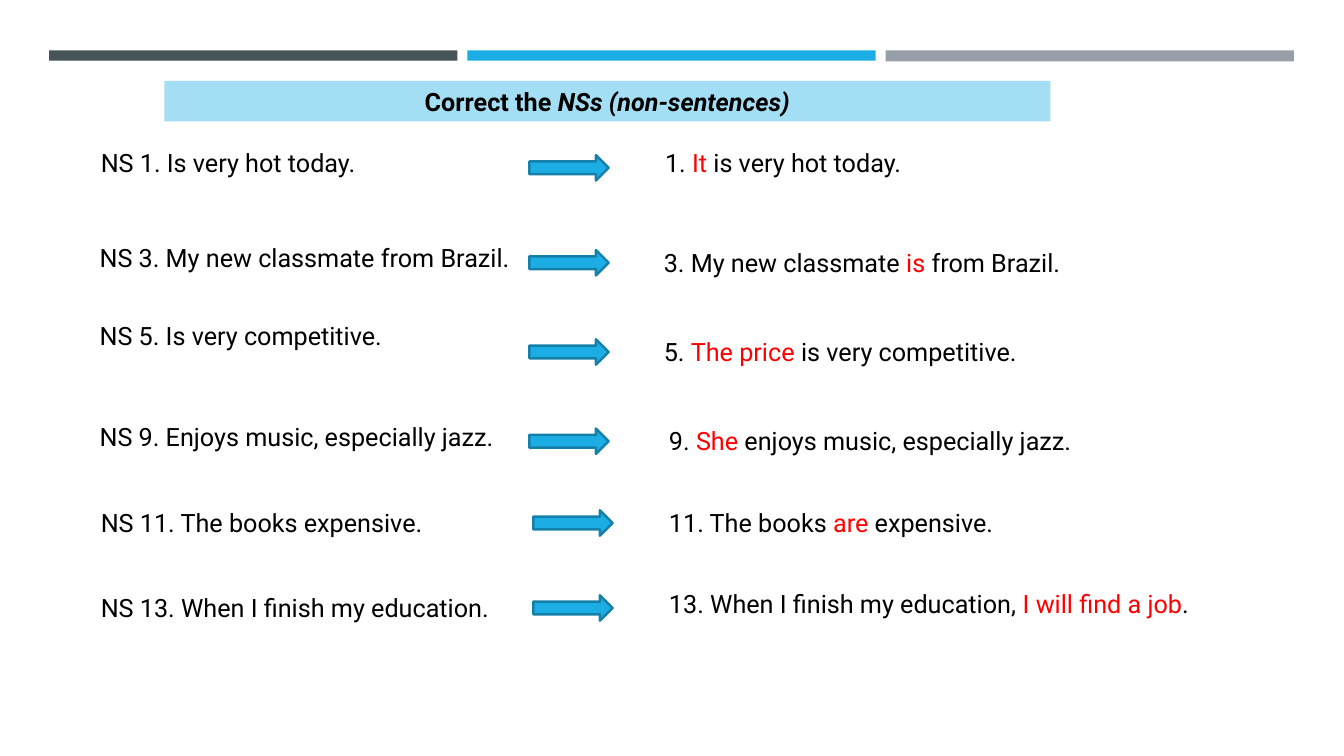
"""Build the slide that corrects non-sentences into full sentences."""
from pptx import Presentation
from pptx.dml.color import RGBColor
from pptx.enum.shapes import MSO_SHAPE
from pptx.enum.text import MSO_ANCHOR, MSO_AUTO_SIZE, PP_ALIGN
from pptx.util import Cm, Pt

RECTANGLE = MSO_SHAPE.RECTANGLE
RIGHT_ARROW = MSO_SHAPE.RIGHT_ARROW
MIDDLE = MSO_ANCHOR.MIDDLE
FIT_SHAPE = MSO_AUTO_SIZE.SHAPE_TO_FIT_TEXT
NO_FIT = MSO_AUTO_SIZE.NONE
CENTER = PP_ALIGN.CENTER

BLACK = RGBColor(0x00, 0x00, 0x00)
RED = RGBColor(0xFF, 0x00, 0x00)
SLATE = RGBColor(0x46, 0x53, 0x59)
BLUE = RGBColor(0x1C, 0xAD, 0xE4)
GRAY = RGBColor(0x96, 0x9F, 0xA7)
DARK_BLUE = RGBColor(0x15, 0x80, 0xA9)
PALE_BLUE = RGBColor(0xA4, 0xDE, 0xF4)

LINE_HEIGHT = 1.02


def add_run(paragraph, text, color=BLACK):
    run = paragraph.add_run()
    run.text = text
    run.font.name = "Roboto"
    run.font.size = Pt(18)
    run.font.color.rgb = color
    return run


def add_sentence(left, top, width, parts):
    box = slide.shapes.add_textbox(Cm(left), Cm(top), Cm(width), Cm(LINE_HEIGHT))
    box.text_frame.word_wrap = True
    box.text_frame.auto_size = FIT_SHAPE
    for text, color in parts:
        add_run(box.text_frame.paragraphs[0], text, color)


presentation = Presentation()
presentation.slide_width = Cm(33.87)
presentation.slide_height = Cm(19.05)
slide = presentation.slides.add_slide(presentation.slide_layouts[5])

for column, (color, height) in enumerate([(SLATE, 0.26), (BLUE, 0.26), (GRAY, 0.28)]):
    bar = slide.shapes.add_shape(
        RECTANGLE, Cm(1.24 + 10.54 * column), Cm(1.27), Cm(10.29), Cm(height))
    bar.shadow.inherit = False
    bar.fill.solid()
    bar.fill.fore_color.rgb = color
    bar.line.fill.background()

heading = slide.shapes.title
heading.left, heading.top = Cm(4.14), Cm(2.04)
heading.width, heading.height = Cm(22.33), Cm(LINE_HEIGHT)
heading.fill.solid()
heading.fill.fore_color.rgb = PALE_BLUE
heading.text_frame.auto_size = NO_FIT
heading.text_frame.vertical_anchor = MIDDLE
heading_line = heading.text_frame.paragraphs[0]
heading_line.alignment = CENTER
for text, italic in [("Correct the ", False), ("NSs (non-sentences)", True)]:
    run = add_run(heading_line, text)
    run.font.bold = True
    run.font.italic = italic

corrections = [
    ("NS 1. Is very hot today.", 2.29, 3.58, 13.34, 3.91, 16.51, 3.58,
     ("1.", " It ", "is very hot today.")),
    ("NS 3. My new classmate from Brazil.", 2.26, 5.99, 13.34, 6.3, 16.48, 6.1,
     ("3. My new classmate ", "is", " from Brazil.")),
    ("NS 5. Is very competitive.", 2.26, 7.95, 13.34, 8.55, 16.48, 8.36,
     ("5. ", "The price ", "is very competitive.")),
    ("NS 9. Enjoys music, especially jazz.", 2.26, 10.49, 13.34, 10.8, 16.61, 10.6,
     ("9. ", "She", " enjoys music, especially jazz.")),
    ("NS 11. The books expensive.", 2.29, 12.65, 13.44, 12.86, 16.61, 12.66,
     ("11. The books ", "are", " expensive.")),
    ("NS 13. When I finish my education.", 2.29, 14.79, 13.44, 15, 16.61, 14.69,
     ("13. When I finish my education, ", "I will find a job", ".")),
]
for (wrong, wrong_left, wrong_top, arrow_left, arrow_top,
     right_left, right_top, right_parts) in corrections:
    add_sentence(wrong_left, wrong_top, 11.46, [(wrong, BLACK)])
    arrow = slide.shapes.add_shape(
        RIGHT_ARROW, Cm(arrow_left), Cm(arrow_top), Cm(2), Cm(0.64))
    arrow.shadow.inherit = False
    arrow.fill.solid()
    arrow.fill.fore_color.rgb = BLUE
    arrow.line.color.rgb = DARK_BLUE
    arrow.line.width = Pt(1.75)
    add_sentence(right_left, right_top, 15.62, zip(right_parts, (BLACK, RED, BLACK)))

presentation.save("out.pptx")
